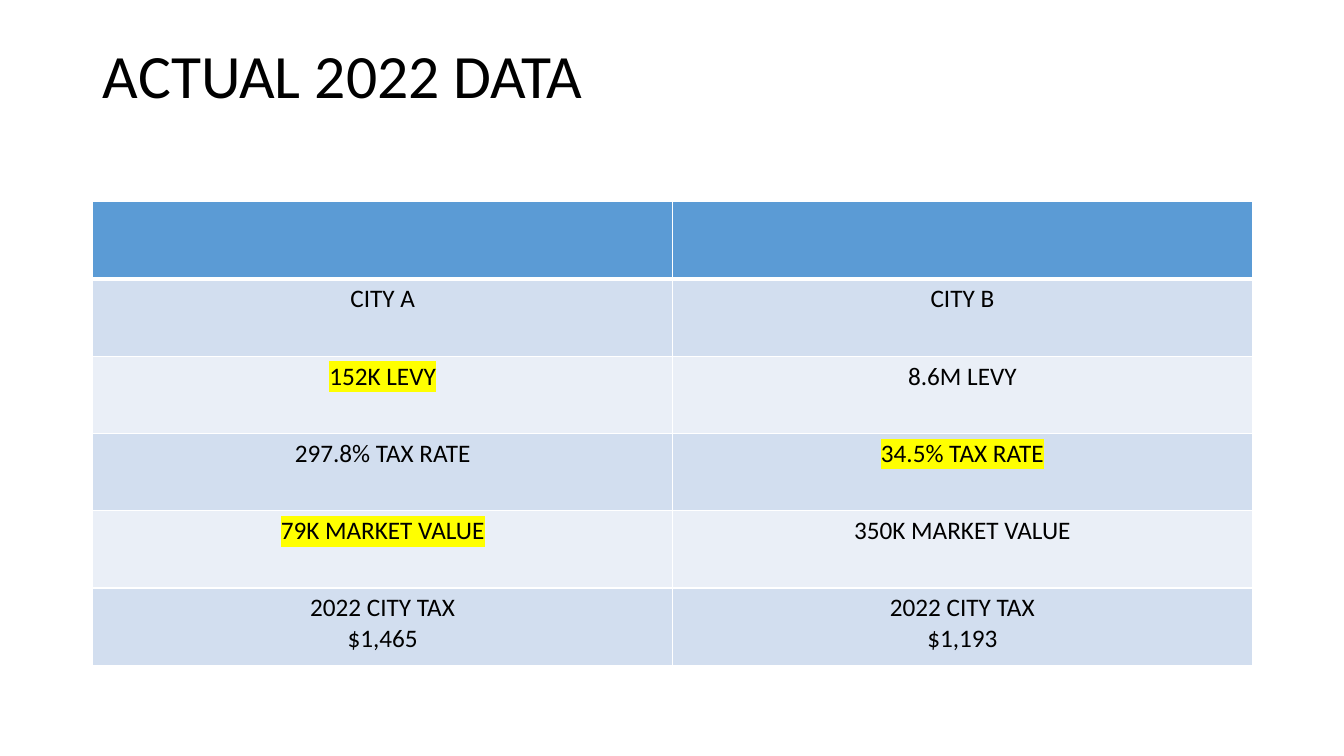
from lxml.etree import SubElement
from pptx import Presentation
from pptx.dml.color import RGBColor
from pptx.enum.text import MSO_ANCHOR as Anchor, MSO_AUTO_SIZE as AutoSize, PP_ALIGN as Align
from pptx.oxml.ns import qn
from pptx.util import Inches, Pt

TITLE = "ACTUAL 2022 DATA"
CITY_ROWS = [
    ([], []),
    (["CITY A"], ["CITY B"]),
    (["152K LEVY"], ["8.6M LEVY"]),
    (["297.8% TAX RATE"], ["34.5% TAX RATE"]),
    (["79K MARKET VALUE"], ["350K MARKET VALUE"]),
    (["2022 CITY TAX", "$1,465"], ["2022 CITY TAX", "$1,193"]),
]
HIGHLIGHTED = {"152K LEVY", "34.5% TAX RATE", "79K MARKET VALUE"}
COLORS = {
    "text": "000000",
    "header": "5B9BD5",
    "odd": "D2DEEF",
    "even": "EAEFF7",
    "border": "FFFFFF",
    "highlight": "FFFF00",
}
FONT = "Calibri"
LEFT, WIDTH = 0.92, 11.5
TITLE_TOP, TITLE_HEIGHT = 0.4, 1.45
TABLE_TOP, TABLE_HEIGHT = 2, 4.6


def add_text(paragraph, text, size):
    run = paragraph.add_run()
    run.text = text
    run.font.size = Pt(size)
    run.font.color.rgb = RGBColor.from_string(COLORS["text"])
    if text in HIGHLIGHTED:
        highlight = SubElement(run.font._element, qn("a:highlight"))
        SubElement(highlight, qn("a:srgbClr"), val=COLORS["highlight"])
    run.font.name = FONT


def add_borders(cell, row):
    properties = cell._tc.get_or_add_tcPr()
    widths = {"lnL": 1, "lnR": 1, "lnT": 3 if row == 1 else 1, "lnB": 3 if row == 0 else 1}
    for side, width in widths.items():
        line = SubElement(properties, qn(f"a:{side}"), w=str(Pt(width)))
        fill = SubElement(line, qn("a:solidFill"))
        SubElement(fill, qn("a:srgbClr"), val=COLORS["border"])


def add_title(slide):
    title = slide.shapes.title
    title.left, title.top = Inches(LEFT), Inches(TITLE_TOP)
    title.width, title.height = Inches(WIDTH), Inches(TITLE_HEIGHT)
    frame = title.text_frame
    frame.auto_size = AutoSize.NONE
    frame.vertical_anchor = Anchor.TOP
    heading = frame.paragraphs[0]
    heading.alignment = Align.LEFT
    heading.line_spacing = 0.9
    add_text(heading, TITLE, 44)


def add_city_table(slide):
    table = slide.shapes.add_table(
        len(CITY_ROWS), len(CITY_ROWS[0]),
        Inches(LEFT), Inches(TABLE_TOP), Inches(WIDTH), Inches(TABLE_HEIGHT),
    ).table
    for row, cities in enumerate(CITY_ROWS):
        shade = "header" if row == 0 else "odd" if row % 2 else "even"
        for column, lines in enumerate(cities):
            cell = table.cell(row, column)
            add_borders(cell, row)
            cell.fill.solid()
            cell.fill.fore_color.rgb = RGBColor.from_string(COLORS[shade])
            frame = cell.text_frame
            for index, line in enumerate(lines):
                paragraph = frame.add_paragraph() if index else frame.paragraphs[0]
                paragraph.alignment = Align.CENTER
                add_text(paragraph, line, 18)


def main():
    deck = Presentation()
    deck.slide_width, deck.slide_height = Inches(13.33), Inches(7.5)
    slide = deck.slides.add_slide(deck.slide_layouts.get_by_name("Title Only"))
    add_title(slide)
    add_city_table(slide)
    deck.save("out.pptx")


if __name__ == "__main__":
    main()
